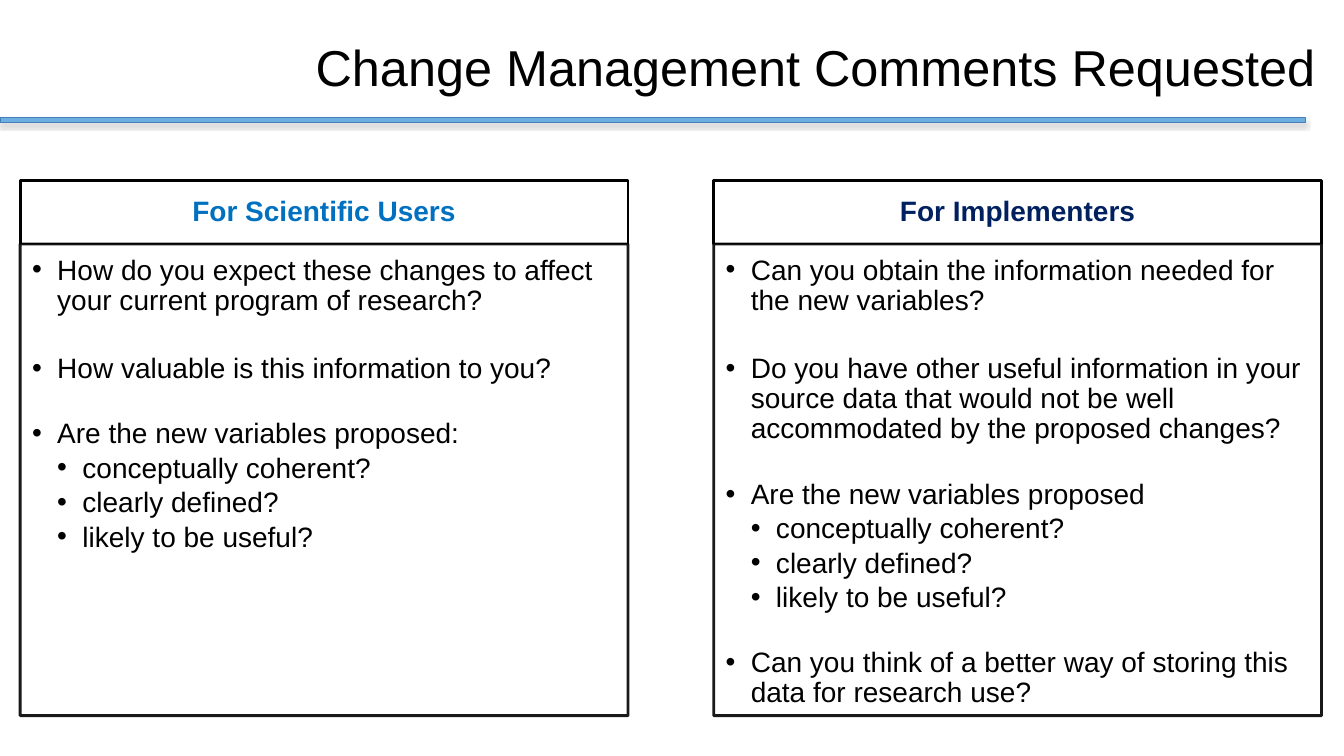
import pptx
import pptx.dml.color
import pptx.enum.shapes
import pptx.enum.text
import pptx.oxml
import pptx.oxml.ns
import pptx.util
from lxml import etree

Pt = pptx.util.Pt
RGBColor = pptx.dml.color.RGBColor
ALIGN = pptx.enum.text.PP_ALIGN
ANCHOR = pptx.enum.text.MSO_ANCHOR
qn = pptx.oxml.ns.qn

BLACK = RGBColor(0x00, 0x00, 0x00)
WHITE = RGBColor(0xFF, 0xFF, 0xFF)
BAR_FILL = RGBColor(0x6B, 0xAF, 0xE0)
BAR_LINE = RGBColor(0x4A, 0x7E, 0xBB)
USERS_BLUE = RGBColor(0x00, 0x70, 0xC0)
IMPLEMENTERS_NAVY = RGBColor(0x00, 0x20, 0x60)

COLUMN_WIDTH, COLUMN_TOP = 434.2, 128.9
HEADER_HEIGHT, BODY_HEIGHT = 45.4, 336.9
INDENT = 18
ITEM_GAP, QUESTION_GAP, FIRST_GAP = 3, 25, 27

# Each item: level, text, space after in points
CRITERIA = [
    (1, "conceptually coherent?", ITEM_GAP),
    (1, "clearly defined?", ITEM_GAP),
    (1, "likely to be useful?", QUESTION_GAP),
]
COLUMNS = [
    (14.4, "For Scientific Users", USERS_BLUE, [
        (0, "How do you expect these changes to affect your current program of research?", FIRST_GAP),
        (0, "How valuable is this information to you?", QUESTION_GAP),
        (0, "Are the new variables proposed:", ITEM_GAP),
        *CRITERIA,
    ]),
    (509.8, "For Implementers", IMPLEMENTERS_NAVY, [
        (0, "Can you obtain the information needed for the new variables?", FIRST_GAP),
        (0, "Do you have other useful information in your source data that would not be "
            "well accommodated by the proposed changes?", QUESTION_GAP),
        (0, "Are the new variables proposed", ITEM_GAP),
        *CRITERIA,
        (0, "Can you think of a better way of storing this data for research use?", ITEM_GAP),
    ]),
]


def write(para, text, size=20, color=BLACK, bold=False, align=ALIGN.LEFT, spacing=0.9, after=0):
    para.alignment = align
    para.line_spacing = spacing
    para.space_after = Pt(after)
    span = para.add_run()
    span.text = text
    span.font.name = "Arial"
    span.font.size = Pt(size)
    span.font.bold = bold
    span.font.color.rgb = color


def add_bullet(para, level):
    para.level = level
    properties = para._p.get_or_add_pPr()
    properties.set("marL", str(Pt(INDENT * (level + 1))))
    properties.set("indent", str(-Pt(INDENT)))
    etree.SubElement(properties, qn("a:buFont")).set("typeface", "Arial")
    etree.SubElement(properties, qn("a:buChar")).set("char", "•")


def set_opacity(color_format, percent):
    color = color_format._xFill.find(qn("a:srgbClr"))
    etree.SubElement(color, qn("a:alpha")).set("val", str(percent * 1000))


class SlideBuilder:
    def __init__(self, deck):
        self.slide = deck.slides.add_slide(deck.slide_layouts[5])

    def frame(self, shape, margins, anchor):
        frame = shape.text_frame
        frame.word_wrap = True
        frame.auto_size = pptx.enum.text.MSO_AUTO_SIZE.NONE
        frame.vertical_anchor = anchor
        (frame.margin_left, frame.margin_top,
         frame.margin_right, frame.margin_bottom) = map(Pt, margins)
        return frame

    def title(self, text, left, top, width, height):
        title = self.slide.shapes.title
        title.left, title.top, title.width, title.height = map(Pt, (left, top, width, height))
        frame = self.frame(title, (7.2, 3.6, 7.2, 3.6), ANCHOR.MIDDLE)
        write(frame.paragraphs[0], text, size=36, spacing=1.0)

    def box(self, left, top, width, height, fill=WHITE, line=BLACK, weight=2, opacity=100):
        box = self.slide.shapes.add_shape(
            pptx.enum.shapes.MSO_SHAPE.RECTANGLE, *map(Pt, (left, top, width, height)))
        box.shadow.inherit = False
        box.fill.solid()
        box.fill.fore_color.rgb = fill
        box.line.color.rgb = line
        box.line.width = Pt(weight)
        if opacity < 100:
            for color in box._element.spPr.iter(qn("a:srgbClr")):
                etree.SubElement(color, qn("a:alpha")).set("val", str(opacity * 1000))
        return box

    def bar(self, left, top, width, height):
        bar = self.box(left, top, width, height, fill=BAR_FILL, line=BAR_LINE, weight=0.75)
        effects = bar._element.spPr.find(qn("a:effectLst"))
        shadow = etree.SubElement(
            effects, qn("a:outerShdw"), blurRad=str(Pt(3.1)), dist=str(Pt(1.8)),
            dir=str(90 * 60000), rotWithShape="0")
        color = etree.SubElement(shadow, qn("a:srgbClr"), val="808080")
        etree.SubElement(color, qn("a:alpha"), val="35000")

    def header(self, text, color, left):
        box = self.box(left, COLUMN_TOP, COLUMN_WIDTH, HEADER_HEIGHT)
        frame = self.frame(box, (11.4, 6.5, 11.4, 6.5), ANCHOR.MIDDLE)
        write(frame.paragraphs[0], text, color=color, bold=True, align=ALIGN.CENTER)

    def questions(self, items, left):
        box = self.box(left, COLUMN_TOP + HEADER_HEIGHT, COLUMN_WIDTH, BODY_HEIGHT, opacity=90)
        frame = self.frame(box, (8.5, 8.5, 11.4, 12.5), ANCHOR.TOP)
        for index, (level, text, after) in enumerate(items):
            para = frame.add_paragraph() if index else frame.paragraphs[0]
            add_bullet(para, level)
            write(para, text, after=after)


def main():
    deck = pptx.Presentation()
    deck.slide_width, deck.slide_height = Pt(960), Pt(540)
    builder = SlideBuilder(deck)
    builder.bar(0, 84.2, 932.4, 3.6)
    builder.title("Change Management Comments Requested", 218.2, 15.1, 733.7, 64.8)
    for left, heading, color, items in COLUMNS:
        builder.header(heading, color, left)
        builder.questions(items, left)
    deck.save("out.pptx")


if __name__ == "__main__":
    main()
